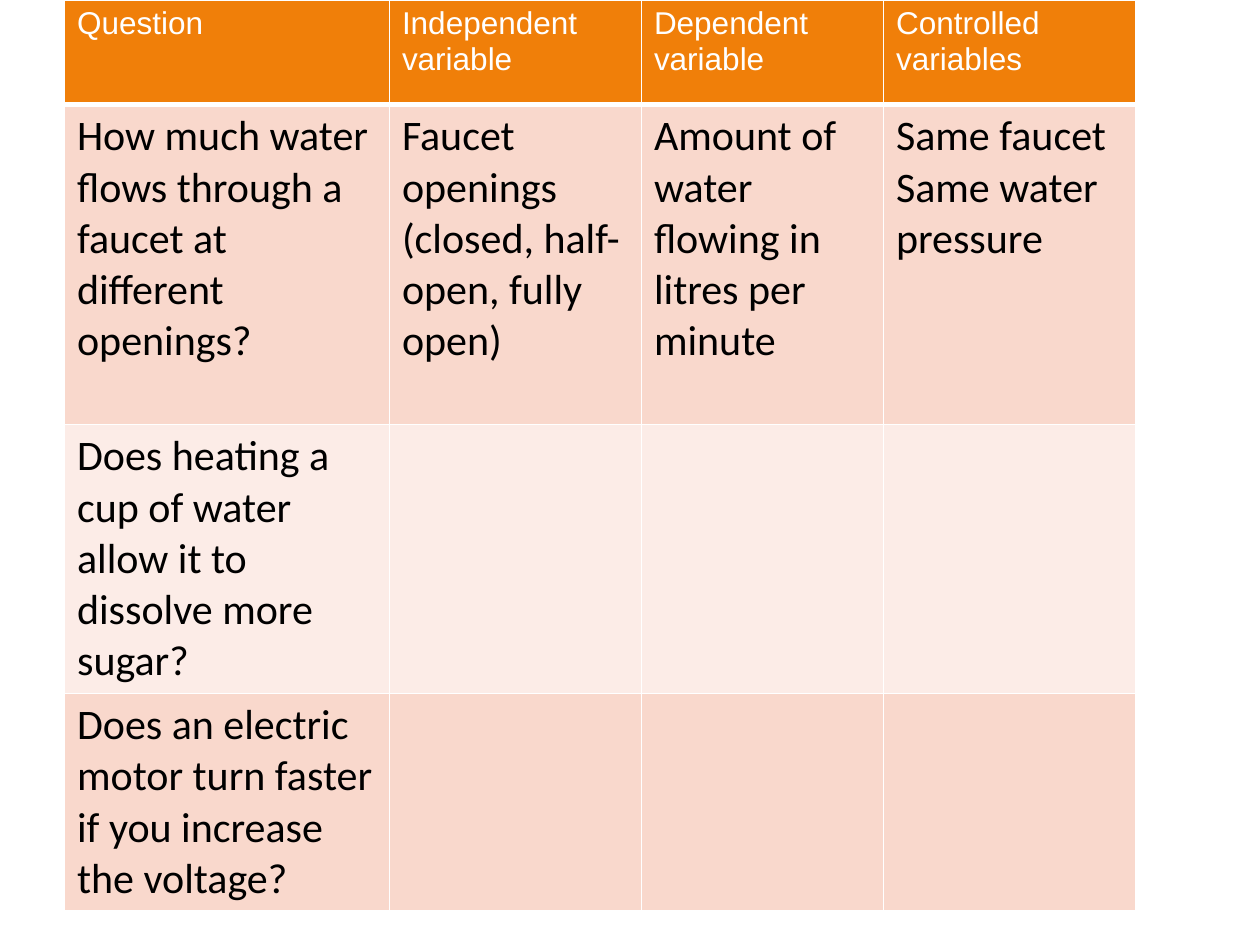
from lxml import etree
from pptx import Presentation
from pptx import util as u
from pptx.dml.color import RGBColor
from pptx.oxml import ns

WHITE = RGBColor(0xFF, 0xFF, 0xFF)
BLACK = RGBColor(0, 0, 0)
ORANGE = RGBColor(0xF0, 0x7F, 0x09)
BANDS = [RGBColor(0xFC, 0xEC, 0xE7), RGBColor(0xF9, 0xD8, 0xCC)]

ROWS = [
    ["Question", "Independent variable", "Dependent variable", "Controlled variables"],
    ["How much water flows through a faucet at different openings?",
     "Faucet openings (closed, half-open, fully open)",
     "Amount of water flowing in litres per minute",
     "Same faucet\nSame water pressure"],
    ["Does heating a cup of water allow it to dissolve more sugar?", "", "", ""],
    ["Does an electric motor turn faster if you increase the voltage?", "", "", ""],
]
WIDTHS = [6.55, 5.08, 4.88, 5.08]
HEIGHTS = [2.11, 6.45, 5.42, 4.37]
LEFT, TOP = 1.3, 0

HEAD = {"name": "Arial", "size": u.Pt(18), "bold": False}
BODY = {"name": "Calibri", "size": u.Pt(24), "bold": False}


def set_borders(cell, widths):
    tc_pr = cell._tc.get_or_add_tcPr()
    for i, (side, width) in enumerate(widths.items()):
        ln = etree.Element(ns.qn(f"a:ln{side}"), w=str(u.Pt(width)))
        fill = etree.SubElement(ln, ns.qn("a:solidFill"))
        etree.SubElement(fill, ns.qn("a:srgbClr"), val=str(WHITE))
        tc_pr.insert(i, ln)


def fill_cell(cell, content, fill, fmt, color):
    cell.fill.solid()
    cell.fill.fore_color.rgb = fill
    tf = cell.text_frame
    tf.text = content
    for p in tf.paragraphs:
        for r in p.runs:
            for key, value in fmt.items():
                setattr(r.font, key, value)
            r.font.color.rgb = color


def main():
    prs = Presentation()
    prs.slide_width, prs.slide_height = u.Cm(25.4), u.Cm(19.05)
    s = prs.slides.add_slide(prs.slide_layouts[6])
    table = s.shapes.add_table(len(ROWS), len(WIDTHS), u.Cm(LEFT), u.Cm(TOP),
                               u.Cm(sum(WIDTHS)), u.Cm(sum(HEIGHTS))).table
    for col, width in zip(table.columns, WIDTHS):
        col.width = u.Cm(width)
    for i, (row, height) in enumerate(zip(ROWS, HEIGHTS)):
        table.rows[i].height = u.Cm(height)
        look = (BANDS[i % 2], BODY, BLACK) if i else (ORANGE, HEAD, WHITE)
        borders = {"L": 1, "R": 1, "T": 3 if i == 1 else 1, "B": 1 if i else 3}
        for j, content in enumerate(row):
            cell = table.cell(i, j)
            fill_cell(cell, content, *look)
            set_borders(cell, borders)
    prs.save("out.pptx")


if __name__ == "__main__":
    main()
